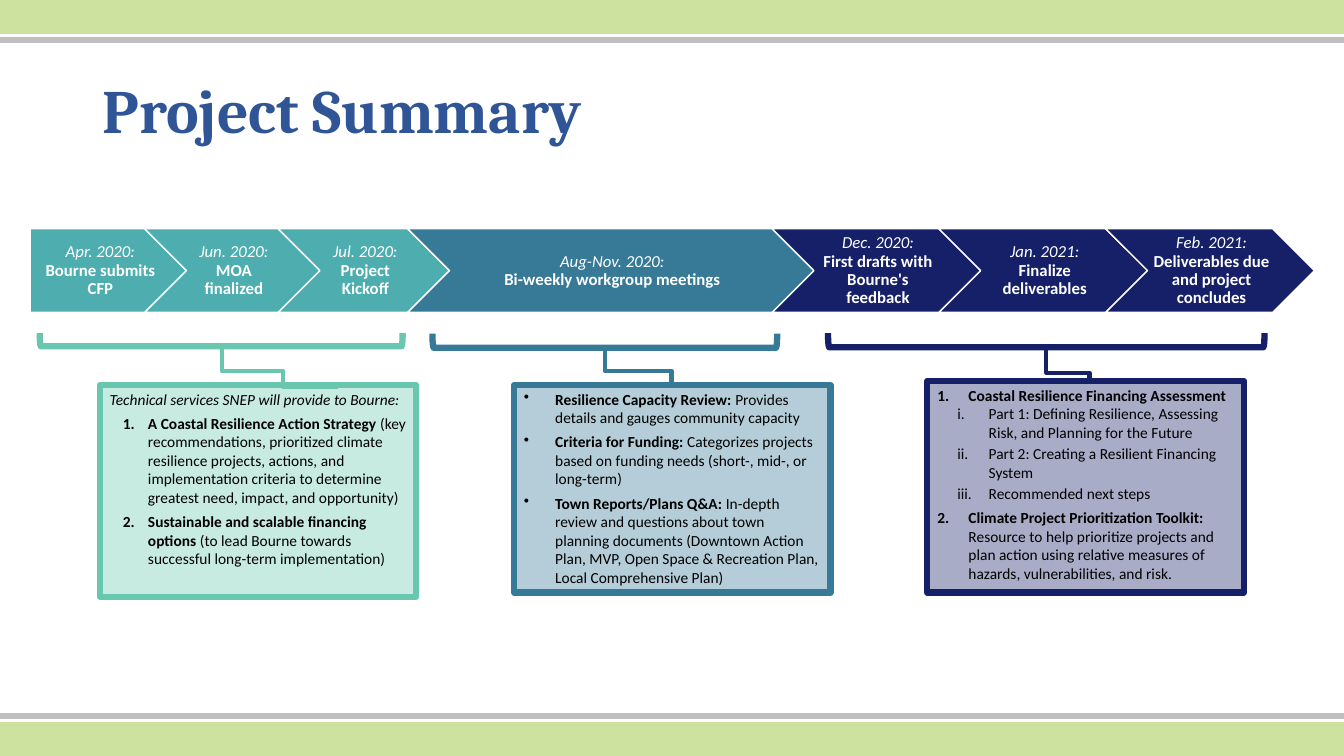
from dataclasses import dataclass
from itertools import product

from lxml import etree
from pptx import Presentation
from pptx import util as u
from pptx.dml.color import RGBColor
from pptx.enum import shapes, text
from pptx.oxml.ns import qn

CELL = 0.1  # inches: the slide is a grid of 133.33 columns by 75 rows
COLUMNS, ROWS = 133.33, 75
Shape = shapes.MSO_SHAPE


@dataclass(frozen=True)
class Theme:
    band: str = "CEE2A0"
    rule: str = "BFBFBF"
    title: str = "2F5597"
    white: str = "FFFFFF"
    black: str = "000000"
    start_step: str = "4DADAF"
    start: str = "69C7AF"
    middle: str = "367A97"
    end: str = "162068"
    heading_font: str = "Cambria"
    body_font: str = "Calibri"
    title_size: float = 44
    step_size: float = 12
    detail_size: float = 11


THEME = Theme()


@dataclass(frozen=True)
class Step:
    width: float
    color: str
    date: str
    label: str


@dataclass(frozen=True)
class Item:
    lead: str = ""
    rest: str = ""
    intro: str = ""
    bullet: str = ""
    margin: float = 0
    hang: float = 0
    level: int = 0
    before: float = 0
    after: float = 0


@dataclass(frozen=True)
class Phase:
    color: str
    box: tuple[float, float, float, float]
    bracket: tuple[float, float, float, float]
    link: tuple[float, float, float, float]
    bends: tuple[float, float]
    items: tuple[Item, ...]


STEPS = (
    Step(15.5, THEME.start_step, "Apr. 2020:", "Bourne submits CFP"),
    Step(17.4, THEME.start_step, "Jun. 2020:", "MOA finalized"),
    Step(17, THEME.start_step, "Jul. 2020:", "Project Kickoff"),
    Step(40.3, THEME.middle, "Aug-Nov. 2020:", "Bi-weekly workgroup meetings"),
    Step(20.7, THEME.end, "Dec. 2020:", "First drafts with Bourne's feedback"),
    Step(20.7, THEME.end, "Jan. 2021:", "Finalize deliverables"),
    Step(20.7, THEME.end, "Feb. 2021:", "Deliverables due and project concludes"),
)

NUMBER, ROMAN, DOT = "arabicPeriod", "romanLcPeriod", "•"
PHASES = (
    Phase(THEME.start, (9.9, 38.2, 31.4, 21), (3.95, 33.05, 36, 1.3),
          (22, 34.3, 33.5, 38.4), (0.62, 0.53), (
        Item(intro="Technical services SNEP will provide to Bourne:", after=4),
        Item("A Coastal Resilience Action Strategy ",
             "(key recommendations, prioritized climate resilience projects, actions, and "
             "implementation criteria to determine greatest need, impact, and opportunity)",
             bullet=NUMBER, margin=3.8, hang=2.5),
        Item("Sustainable and scalable financing options ",
             "(to lead Bourne towards successful long-term implementation)",
             bullet=NUMBER, margin=3.8, hang=2.5, before=4))),
    Phase(THEME.middle, (51, 38.2, 31.4, 20.6), (42.9, 33.1, 34.2, 1.4),
          (60, 34.3, 72.5, 38.2), (0.64, 0.53), (
        Item("Resilience Capacity Review: ", "Provides details and gauges community capacity",
             bullet=DOT, margin=3.1, hang=3.1, after=4),
        Item("Criteria for Funding: ",
             "Categorizes projects based on funding needs (short-, mid-, or long-term)",
             bullet=DOT, margin=3.1, hang=3.1, after=4),
        Item("Town Reports/Plans Q&A: ",
             "In-depth review and questions about town planning documents (Downtown Action "
             "Plan, MVP, Open Space & Recreation Plan, Local Comprehensive Plan)",
             bullet=DOT, margin=3.1, hang=3.1, after=4))),
    Phase(THEME.end, (92, 37.8, 31.4, 21), (82.15, 33.05, 43.3, 1.4),
          (103.8, 34.5, 111.6, 37.8), (0.75, 0.55), (
        Item("Coastal Resilience Financing Assessment", bullet=NUMBER, margin=3.1, hang=3.1),
        Item(rest="Part 1: Defining Resilience, Assessing Risk, and Planning for the Future",
             bullet=ROMAN, margin=5.1, hang=3.1, level=1, after=2),
        Item(rest="Part 2: Creating a Resilient Financing System",
             bullet=ROMAN, margin=5.1, hang=3.1, level=1, after=2),
        Item(rest="Recommended next steps",
             bullet=ROMAN, margin=5.1, hang=3.1, level=1, after=4),
        Item("Climate Project Prioritization Toolkit: ",
             "Resource to help prioritize projects and plan action using relative measures "
             "of hazards, vulnerabilities, and risk.", bullet=NUMBER, margin=3.1, hang=3.1))),
)


def cells(count: float) -> u.Length:
    return u.Inches(count * CELL)


def add_span(para, words: str, *, size: float, color: str = THEME.black,
             font: str = THEME.body_font, bold: bool = False, italic: bool = False) -> None:
    span = para.add_run()
    span.text = words
    span.font.size, span.font.name = u.Pt(size), font
    span.font.bold, span.font.italic = bold, italic
    span.font.color.rgb = RGBColor.from_string(color)


def add_figure(page, kind, area, *, fill: str = "", line: str, weight: float = 1):
    figure = page.shapes.add_shape(kind, *map(cells, area))
    figure.shadow.inherit = False
    if fill:
        figure.fill.solid()
        figure.fill.fore_color.rgb = RGBColor.from_string(fill)
    else:
        figure.fill.background()
    figure.line.color.rgb = RGBColor.from_string(line)
    figure.line.width = u.Pt(weight)
    return figure


def add_text_box(page, area, insets=(1, 0.5, 1, 0.5)):
    """Add a wrapped, vertically centred text box and return its first paragraph."""
    frame = page.shapes.add_textbox(*map(cells, area)).text_frame
    frame.word_wrap = True
    frame.vertical_anchor = text.MSO_ANCHOR.MIDDLE
    (frame.margin_left, frame.margin_top,
     frame.margin_right, frame.margin_bottom) = map(cells, insets)
    para = frame.paragraphs[0]
    para.line_spacing = 0.9
    return para


def add_steps(page, left: float = 3, top: float = 22.7, height: float = 8.3) -> None:
    """Lay the arrows in a row, each starting where the last one's point begins."""
    point = height / 2
    for index, step in enumerate(STEPS):
        kind = Shape.CHEVRON if index else Shape.PENTAGON
        add_figure(page, kind, (left, top, step.width, height),
                   fill=step.color, line=THEME.white)
        if index:
            area = (left + point, top, step.width - 2 * point, height)
        else:
            area = (left, top, step.width - point / 2, height)
        para = add_text_box(page, area, (0.5 if index else 0.7, 0.4, 0.2, 0.4))
        para.alignment = text.PP_ALIGN.CENTER
        add_span(para, step.date, size=THEME.step_size, color=THEME.white, italic=True)
        para.add_line_break()
        add_span(para, step.label, size=THEME.step_size, color=THEME.white, bold=True)
        left += step.width - point


def set_bullet(para, item: Item) -> None:
    props = para._p.get_or_add_pPr()
    props.set("marL", str(cells(item.margin)))
    props.set("indent", str(cells(-item.hang)))
    if item.bullet == DOT:
        etree.SubElement(props, qn("a:buChar"), char=DOT)
    else:
        etree.SubElement(props, qn("a:buAutoNum"), type=item.bullet)


def add_details(page, phase: Phase) -> None:
    box = add_figure(page, Shape.RECTANGLE, phase.box,
                     fill=phase.color, line=phase.color, weight=4.5)
    tint = box.fill._xPr.find(f"{qn('a:solidFill')}/{qn('a:srgbClr')}")
    etree.SubElement(tint, qn("a:alpha"), val="37000")
    frame = box.text_frame
    frame.word_wrap = True
    frame.vertical_anchor = text.MSO_ANCHOR.TOP
    for index, item in enumerate(phase.items):
        para = frame.add_paragraph() if index else frame.paragraphs[0]
        para.alignment, para.level = text.PP_ALIGN.LEFT, item.level
        para.space_before, para.space_after = u.Pt(item.before), u.Pt(item.after)
        if item.bullet:
            set_bullet(para, item)
        for words, style in ((item.intro, {"italic": True}),
                             (item.lead, {"bold": True}), (item.rest, {})):
            if words:
                add_span(para, words, size=THEME.detail_size, **style)


def add_bracket(page, phase: Phase) -> None:
    """Turn a left bracket so that it opens upwards within the phase's bracket area."""
    left, top, width, height = phase.bracket
    area = (left + (width - height) / 2, top + (height - width) / 2, height, width)
    bracket = add_figure(page, Shape.LEFT_BRACKET, area, line=phase.color, weight=4.5)
    bracket.rotation = 270


def add_link(page, phase: Phase) -> None:
    """Draw a four-part elbow that leaves its start downwards."""
    x1, y1, x2, y2 = phase.link
    middle_x, middle_y = (x1 + x2) / 2, (y1 + y2) / 2
    half_w, half_h = (y2 - y1) / 2, (x2 - x1) / 2
    link = page.shapes.add_connector(
        shapes.MSO_CONNECTOR.ELBOW, cells(middle_x - half_w), cells(middle_y - half_h),
        cells(middle_x + half_w), cells(middle_y + half_h))
    link.line.color.rgb = RGBColor.from_string(phase.color)
    link.line.width = u.Pt(3)
    props = link._element.spPr
    etree.SubElement(props, qn("a:effectLst"))
    turn = props.find(qn("a:xfrm"))
    turn.set("rot", str(270 * 60000))
    turn.set("flipH", "1")
    geometry = props.find(qn("a:prstGeom"))
    geometry.set("prst", "bentConnector4")
    for number, share in enumerate(phase.bends, 1):
        etree.SubElement(geometry.find(qn("a:avLst")), qn("a:gd"),
                         name=f"adj{number}", fmla=f"val {round(share * 100000)}")


def main() -> None:
    deck = Presentation()
    deck.slide_width, deck.slide_height = cells(COLUMNS), cells(ROWS)
    page = deck.slides.add_slide(deck.slide_layouts[6])
    add_span(add_text_box(page, (9.2, 4, 115, 14.5)), "Project Summary", bold=True,
             size=THEME.title_size, color=THEME.title, font=THEME.heading_font)
    bars = ((0, 3.3, THEME.band), (3.7, 0.5, THEME.rule))
    for (offset, height, color), at_foot in product(bars, (False, True)):
        top = ROWS - offset - height if at_foot else offset
        add_figure(page, Shape.RECTANGLE, (0, top, COLUMNS, height), fill=color, line=color)
    add_steps(page)
    for draw, phase in product((add_details, add_bracket, add_link), PHASES):
        draw(page, phase)
    deck.save("out.pptx")


if __name__ == "__main__":
    main()
